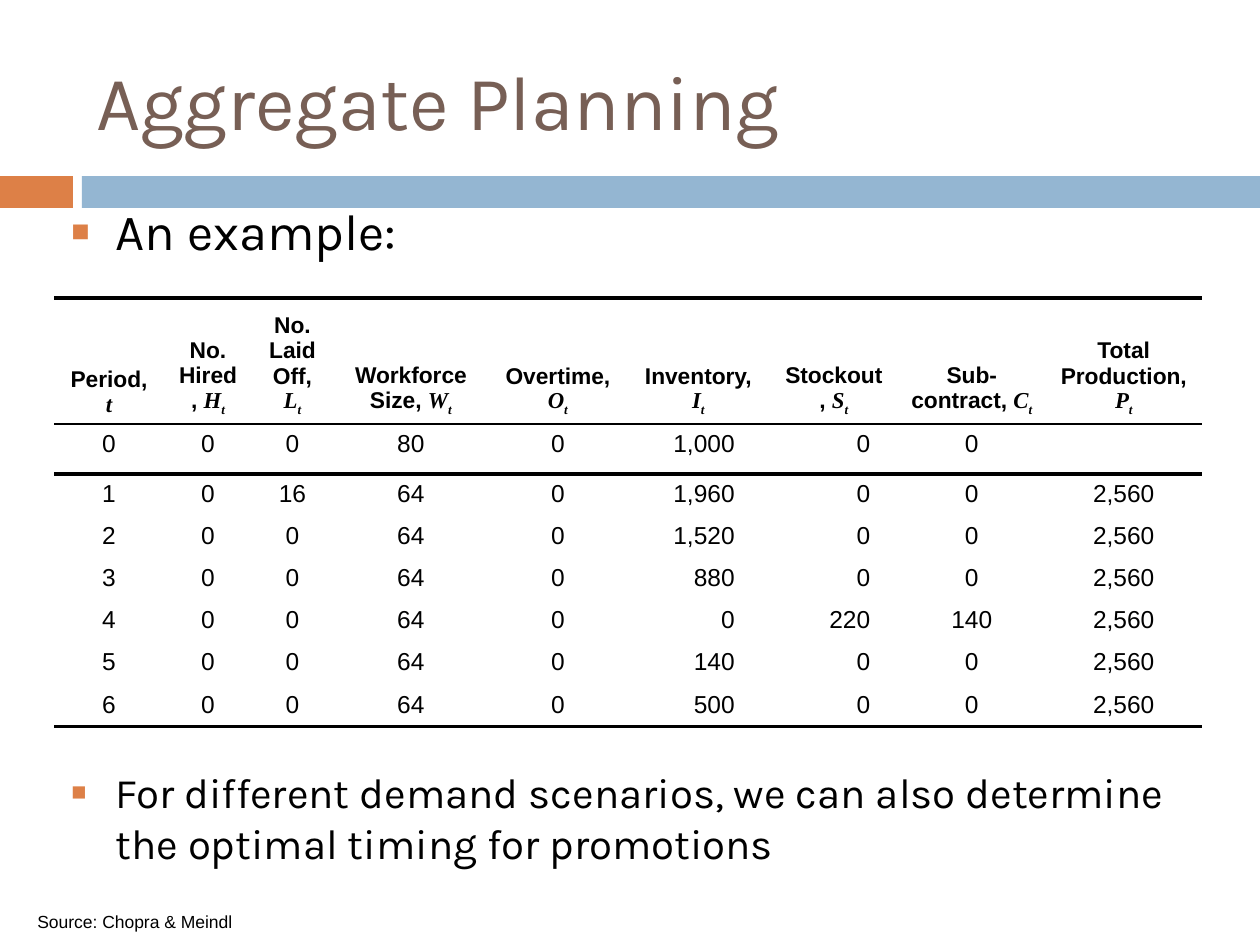
import pptx
import pptx.util
import pptx.dml.color
import pptx.enum.shapes
import pptx.enum.text
import pptx.oxml
import pptx.oxml.ns
import lxml.etree

PX = 914400 / 126
COLORS = {"orange": "DD8047", "blue": "94B6D2", "brown": "775F55", "black": "000000"}
ANCHOR = pptx.enum.text.MSO_ANCHOR
CENTER = pptx.enum.text.PP_ALIGN.CENTER

COLUMNS = [110, 88, 81, 156, 138, 143, 128, 148, 156]
ROWS = [122] + [42] * 7
HEADERS = [("Period, ", "t", ""), ("No. Hired, ", "H", "t"), ("No. Laid Off, ", "L", "t"),
           ("Workforce Size, ", "W", "t"), ("Overtime, ", "O", "t"),
           ("Inventory, ", "I", "t"), ("Stockout, ", "S", "t"),
           ("Sub-contract, ", "C", "t"), ("Total Production, ", "P", "t")]
PLAN = [["0", "0", "0", "80", "0", "1,000", "0", "0", ""],
        ["1", "0", "16", "64", "0", "1,960", "0", "0", "2,560"],
        ["2", "0", "0", "64", "0", "1,520", "0", "0", "2,560"],
        ["3", "0", "0", "64", "0", "880", "0", "0", "2,560"],
        ["4", "0", "0", "64", "0", "0", "220", "140", "2,560"],
        ["5", "0", "0", "64", "0", "140", "0", "0", "2,560"],
        ["6", "0", "0", "64", "0", "500", "0", "0", "2,560"]]
TABBED = (5, 6)  # Inventory and Stockout are right-aligned on a tab
RULES = [2.25, 1.5, 2.25, 0, 0, 0, 0, 0, 2.25]  # line widths above each row and below the last


def px(n):
    return pptx.util.Emu(round(n * PX))


def rgb(name):
    return pptx.dml.color.RGBColor.from_string(COLORS[name])


def child(parent, tag, **attrs):
    return lxml.etree.SubElement(parent, pptx.oxml.ns.qn(tag), attrs)


def add_run(p, text, size, font="Arial", color="black", **formats):
    r = p.add_run()
    r.text = text
    formats.update(size=pptx.util.Pt(size), name=font)
    for key, value in formats.items():
        setattr(r.font, key, value)
    r.font.color.rgb = rgb(color)
    return r


def add_text(slide, box, anchor=ANCHOR.TOP):
    tf = slide.shapes.add_textbox(*map(px, box)).text_frame
    tf.word_wrap = True
    tf.vertical_anchor = anchor
    return tf


def add_band(slide, box):
    """Orange block, gap, then a blue bar to the right edge."""
    x, y, w, h = box
    for left, width, color in ((0, 73, "orange"), (82, w - 82, "blue")):
        sp = slide.shapes.add_shape(pptx.enum.shapes.MSO_SHAPE.RECTANGLE,
                                    px(x + left), px(y), px(width), px(h))
        sp.shadow.inherit = False
        sp.fill.solid()
        sp.fill.fore_color.rgb = rgb(color)
        sp.line.fill.background()


def add_title(slide, box):
    tf = add_text(slide, box, ANCHOR.MIDDLE)
    add_run(tf.paragraphs[0], "Aggregate Planning", 44, "Karla", "brown")


def add_bullets(slide, box):
    """Two bullets, with room for the table between them."""
    tf = add_text(slide, box)
    items = [("An example:", 29, 7),
             ("For different demand scenarios, we can also determine "
              "the optimal timing for promotions", 24, 289)]
    for i, (text, size, before) in enumerate(items):
        p = tf.add_paragraph() if i else tf.paragraphs[0]
        p.space_before = pptx.util.Pt(before)
        pPr = p._p.get_or_add_pPr()
        pPr.set("marL", str(px(44)))
        pPr.set("indent", str(-px(44)))
        child(child(pPr, "a:buClr"), "a:srgbClr", val=COLORS["orange"])
        child(pPr, "a:buSzPct", val="60000")
        child(pPr, "a:buFont", typeface="Arial")
        child(pPr, "a:buChar", char="■")
        add_run(p, text, size, "Karla")


def set_borders(cell, top, bottom):
    tcPr = cell._tc.get_or_add_tcPr()
    for tag, width in (("a:lnL", 0), ("a:lnR", 0), ("a:lnT", top), ("a:lnB", bottom)):
        ln = child(tcPr, tag, w=str(pptx.util.Pt(width)))
        if width:
            child(child(ln, "a:solidFill"), "a:srgbClr", val=COLORS["black"])
        else:
            child(ln, "a:noFill")
    cell.fill.background()


def add_plan_table(slide, box):
    table = slide.shapes.add_table(len(ROWS), len(COLUMNS), *map(px, box)).table
    table.first_row = table.horz_banding = False
    for column, width in zip(table.columns, COLUMNS):
        column.width = px(width)
    for row, height in zip(table.rows, ROWS):
        row.height = px(height)

    for i in range(len(ROWS)):
        for j in range(len(COLUMNS)):
            cell = table.cell(i, j)
            set_borders(cell, RULES[i], RULES[i + 1])
            p = cell.text_frame.paragraphs[0]
            p.alignment = CENTER
            if i == 0:
                # Header: label, italic symbol, subscript
                cell.vertical_anchor = ANCHOR.BOTTOM
                label, symbol, index = HEADERS[j]
                add_run(p, label, 13, bold=True)
                add_run(p, symbol, 13, "Times New Roman", bold=True, italic=True)
                if index:
                    r = add_run(p, index, 13, "Times New Roman", bold=True, italic=True)
                    r.font._element.set("baseline", "-25000")
                continue
            text = PLAN[i - 1][j]
            if j in TABBED:
                tabs = child(p._p.get_or_add_pPr(), "a:tabLst")
                child(tabs, "a:tab", pos=str(px(73)), algn="r")
                text = "\t" + text
            add_run(p, text, 14)


def add_source(slide, box):
    add_run(add_text(slide, box).paragraphs[0], "Source: Chopra & Meindl", 10)


def main():
    prs = pptx.Presentation()
    prs.slide_width, prs.slide_height = px(1260), px(945)
    slide = prs.slides.add_slide(prs.slide_layouts[6])
    add_band(slide, (0, 176, 1260, 32))
    add_title(slide, (84, 32, 1124, 136))
    add_bullets(slide, (59, 194, 1140, 639))
    add_plan_table(slide, (54, 298, sum(COLUMNS), sum(ROWS)))
    add_source(slide, (25, 905, 643, 34))
    prs.save("out.pptx")


if __name__ == "__main__":
    main()
